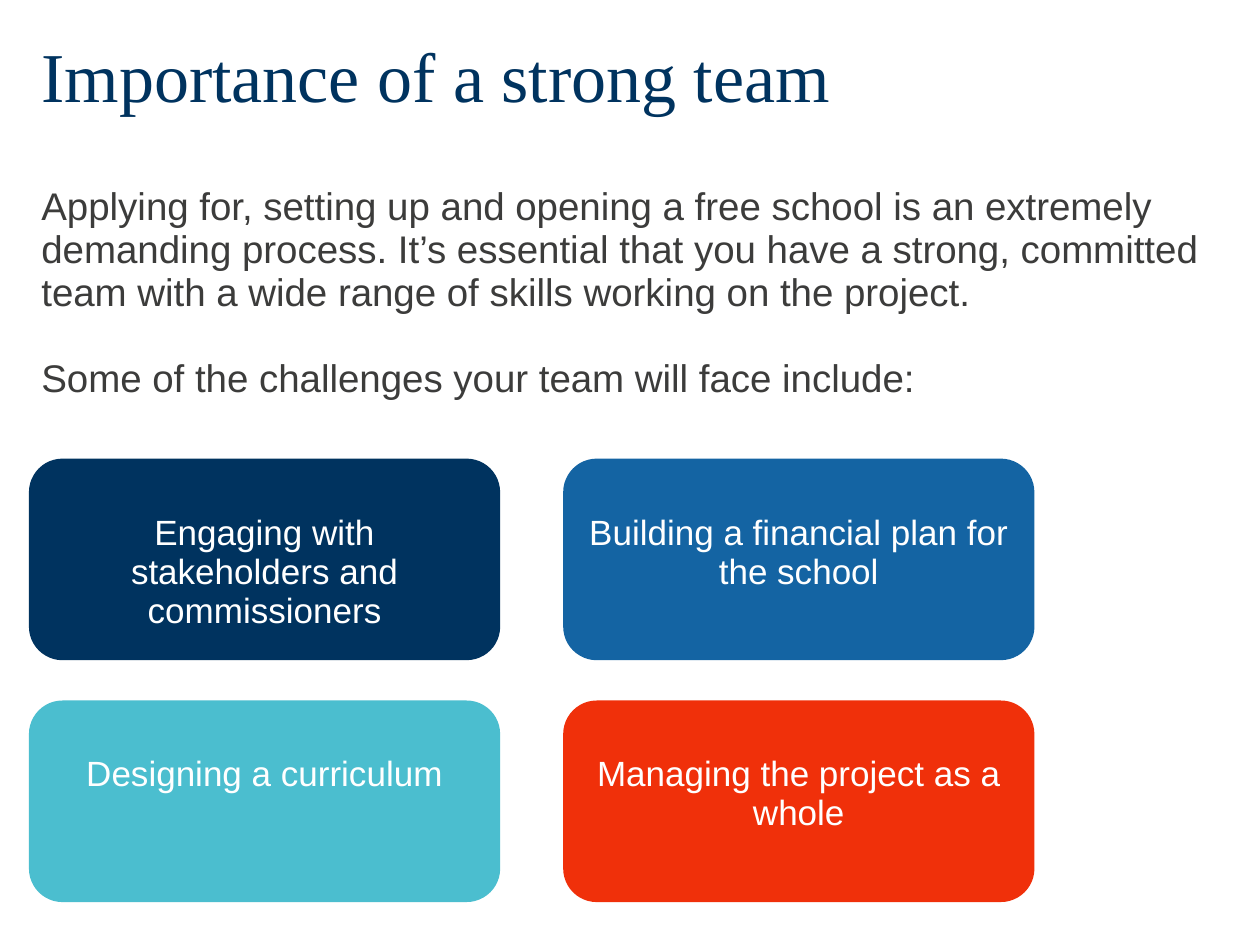
from pptx import Presentation
from pptx.dml.color import RGBColor
from pptx.enum.shapes import MSO_SHAPE
from pptx.enum.text import MSO_ANCHOR, PP_ALIGN
from pptx.util import Inches, Pt

# Content
TITLE = "Importance of a strong team"
INTRO = [
    "Applying for, setting up and opening a free school is an extremely demanding process. "
    "It’s essential that you have a strong, committed team with a wide range of skills "
    "working on the project.",
    "Some of the challenges your team will face include:",
]
CHALLENGES = [
    ("Engaging with stakeholders and commissioners", "navy"),
    ("Building a financial plan for the school", "blue"),
    ("Designing a curriculum", "teal"),
    ("Managing the project as a whole", "red"),
]

# Theme
THEME = {
    "colours": {
        "navy": RGBColor.from_string("00335F"),
        "blue": RGBColor.from_string("1464A3"),
        "teal": RGBColor.from_string("4BBECF"),
        "red": RGBColor.from_string("F0300A"),
        "grey": RGBColor.from_string("3C3C3B"),
        "white": RGBColor.from_string("FFFFFF"),
    },
    "title": {"name": "Times New Roman", "size": Pt(40), "colour": "navy"},
    "intro": {"name": "Arial", "size": Pt(22), "colour": "grey"},
    "card": {"name": "Arial", "size": Pt(20), "colour": "white"},
}

# Layout in inches
LEFT, TEXT_WIDTH = 0.23, 9.45
CARD_TOP, CARD_WIDTH, CARD_HEIGHT = 3.64, 3.74, 1.6
COLUMN_GAP, ROW_GAP, COLUMNS = 0.5, 0.32, 2


def write(shape, texts, style, top_inset=0.05, **para_format):
    frame = shape.text_frame
    frame_format = {
        "word_wrap": True,
        "vertical_anchor": MSO_ANCHOR.TOP,
        "margin_left": Inches(0.1),
        "margin_right": Inches(0.1),
        "margin_top": Inches(top_inset),
        "margin_bottom": Inches(0.05),
    }
    for name, value in frame_format.items():
        setattr(frame, name, value)
    for index, text in enumerate(texts):
        para = frame.paragraphs[0] if index == 0 else frame.add_paragraph()
        for name, value in para_format.items():
            setattr(para, name, value)
        para.space_before = Pt(24.5) if index else Pt(0)
        span = para.add_run()
        span.text = text
        for name in ("name", "size"):
            setattr(span.font, name, THEME[style][name])
        span.font.color.rgb = THEME["colours"][THEME[style]["colour"]]


def place(shape, left, top, width, height):
    for name, value in zip(("left", "top", "width", "height"), (left, top, width, height)):
        setattr(shape, name, Inches(value))


def main():
    deck = Presentation()
    deck.slide_width, deck.slide_height = Inches(10), Inches(7.5)
    page = deck.slides.add_slide(deck.slide_layouts[5])

    # Title
    title = page.shapes.title
    place(title, LEFT, 0.28, TEXT_WIDTH, 0.9)
    write(title, [TITLE], "title", line_spacing=0.9, alignment=PP_ALIGN.LEFT)

    # Introduction
    box = page.shapes.add_textbox(
        Inches(LEFT), Inches(1.43), Inches(TEXT_WIDTH), Inches(1.95))
    write(box, INTRO, "intro", line_spacing=0.93, alignment=PP_ALIGN.LEFT)

    # Challenge cards, row by row
    for index, (text, colour) in enumerate(CHALLENGES):
        row, column = divmod(index, COLUMNS)
        card = page.shapes.add_shape(
            MSO_SHAPE.ROUNDED_RECTANGLE,
            Inches(LEFT + column * (CARD_WIDTH + COLUMN_GAP)),
            Inches(CARD_TOP + row * (CARD_HEIGHT + ROW_GAP)),
            Inches(CARD_WIDTH), Inches(CARD_HEIGHT))
        card.shadow.inherit = False
        card.fill.solid()
        card.fill.fore_color.rgb = THEME["colours"][colour]
        card.line.fill.background()
        write(card, [text], "card", top_inset=0.36,
              line_spacing=0.93, alignment=PP_ALIGN.CENTER)

    deck.save("out.pptx")


if __name__ == "__main__":
    main()
